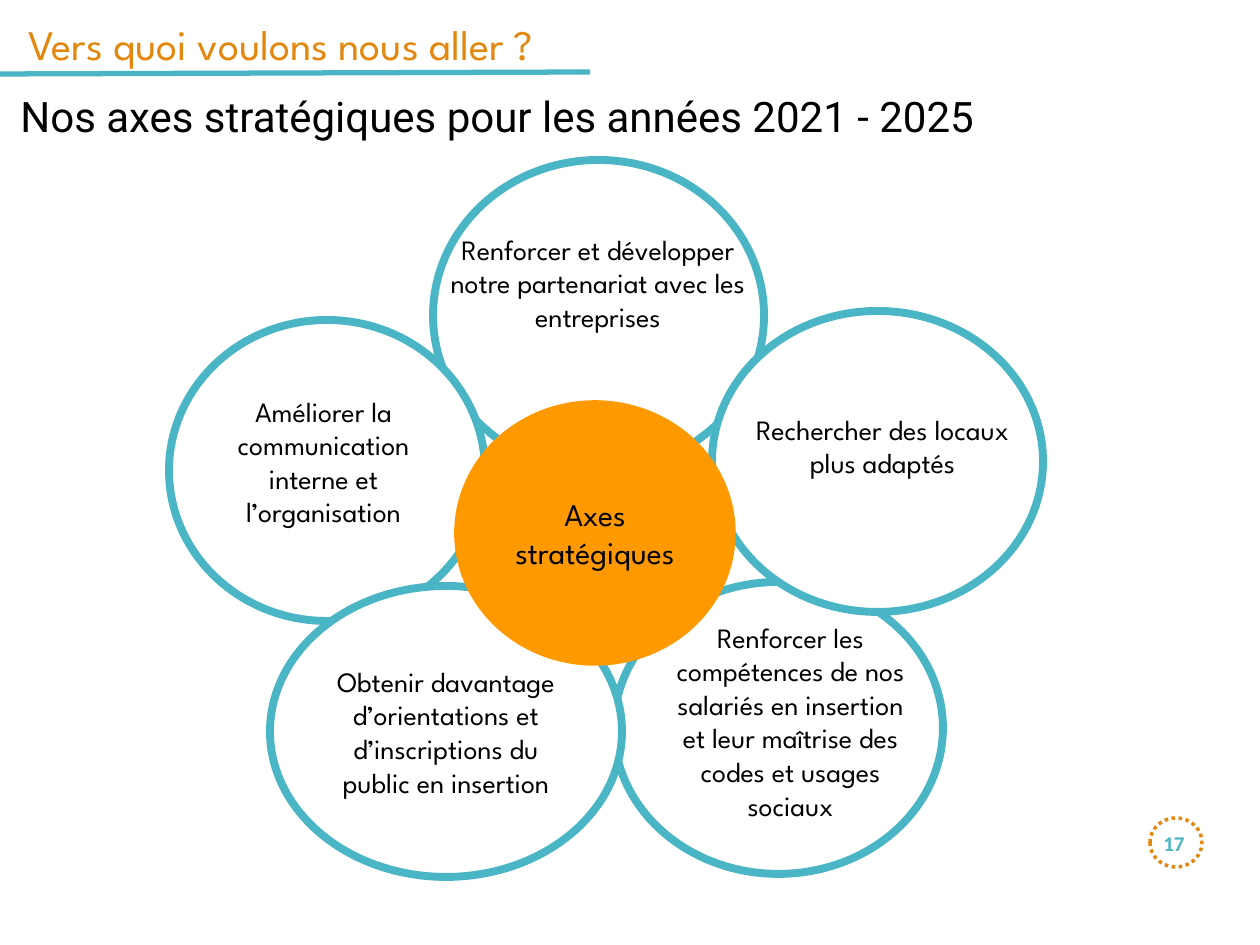
from dataclasses import dataclass
from typing import Any, Optional

from pptx import Presentation
from pptx.dml.color import RGBColor
from pptx.enum.dml import MSO_LINE
from pptx.enum.shapes import MSO_CONNECTOR, MSO_SHAPE
from pptx.enum.text import MSO_ANCHOR, MSO_AUTO_SIZE, PP_ALIGN
from pptx.oxml.ns import qn
from pptx.util import Emu, Pt
from lxml.etree import SubElement

EMU_PER_INCH = 914400
PX_PER_INCH = 126

TEAL = RGBColor(0x4A, 0xB5, 0xC4)
OCHRE = RGBColor(0xE3, 0x88, 0x0F)
ORANGE = RGBColor(0xFF, 0x99, 0x00)
WHITE = RGBColor(0xFF, 0xFF, 0xFF)
BLACK = RGBColor(0x00, 0x00, 0x00)


@dataclass(frozen=True)
class Frame:
    left: int
    top: int
    width: int
    height: int


@dataclass(frozen=True)
class Style:
    size: int
    color: RGBColor = BLACK
    font: str = "League Spartan"
    bold: bool = False
    align: PP_ALIGN = PP_ALIGN.CENTER
    anchor: MSO_ANCHOR = MSO_ANCHOR.TOP
    auto_size: MSO_AUTO_SIZE = MSO_AUTO_SIZE.SHAPE_TO_FIT_TEXT


@dataclass(frozen=True)
class Label:
    frame: Frame
    text: str
    style: Style


@dataclass(frozen=True)
class Circle:
    frame: Frame
    fill: Optional[RGBColor] = WHITE
    line: RGBColor = TEAL
    weight: float = 4.5
    dash: Optional[MSO_LINE] = None
    text: str = ""


FIXED = {"anchor": MSO_ANCHOR.MIDDLE, "auto_size": MSO_AUTO_SIZE.NONE}
TITLE = Style(24, OCHRE, align=PP_ALIGN.LEFT, **FIXED)
SUBTITLE = Style(24, font="Roboto", align=PP_ALIGN.LEFT)
NUMBER = Style(12, TEAL, "Calibri", True, PP_ALIGN.RIGHT, **FIXED)
AXIS = Style(16)
INSIDE = Style(16, **FIXED)
HUB = Style(18)

CIRCLES = [
    Circle(Frame(1150, 818, 52, 49), None, OCHRE, 2, MSO_LINE.ROUND_DOT),
    Circle(Frame(614, 582, 329, 292)),
    Circle(Frame(433, 160, 331, 311)),
    Circle(Frame(169, 320, 316, 301)),
    Circle(Frame(712, 311, 331, 301)),
    Circle(
        Frame(270, 586, 352, 291),
        text="Obtenir davantage d’orientations et d’inscriptions du public en insertion",
    ),
    Circle(Frame(456, 402, 278, 262), ORANGE, ORANGE, 2),
]

LABELS = [
    Label(Frame(903, 818, 294, 50), "17", NUMBER),
    Label(Frame(8, 84, 1114, 63), "Nos axes stratégiques pour les années 2021 - 2025", SUBTITLE),
    Label(Frame(435, 226, 326, 149), "Renforcer et développer notre partenariat avec les entreprises", AXIS),
    Label(
        Frame(662, 614, 257, 251),
        "Renforcer les compétences de nos salariés en insertion et leur maîtrise des codes et usages sociaux",
        AXIS,
    ),
    Label(Frame(742, 406, 281, 115), "Rechercher des locaux plus adaptés", AXIS),
    Label(Frame(202, 388, 243, 149), "Améliorer la communication interne et l’organisation", AXIS),
    Label(Frame(478, 489, 234, 89), "Axes stratégiques", HUB),
]


def px(length: int) -> Emu:
    return Emu(round(length * EMU_PER_INCH / PX_PER_INCH))


def place(frame: Frame) -> tuple[Emu, Emu, Emu, Emu]:
    return px(frame.left), px(frame.top), px(frame.width), px(frame.height)


def apply(target: Any, values: dict[str, Any]) -> None:
    for name, value in values.items():
        setattr(target, name, value)


def write(box: Any, text: str, style: Style) -> None:
    apply(box.text_frame, {
        "word_wrap": True,
        "auto_size": style.auto_size,
        "vertical_anchor": style.anchor,
    })
    para = box.text_frame.paragraphs[0]
    para.alignment = style.align
    span = para.add_run()
    span.text = text
    apply(span.font, {"name": style.font, "size": Pt(style.size), "bold": style.bold})
    span.font.color.rgb = style.color


def draw_circle(page: Any, circle: Circle) -> None:
    shape = page.shapes.add_shape(MSO_SHAPE.OVAL, *place(circle.frame))
    shape.shadow.inherit = False
    if circle.fill is None:
        shape.fill.background()
    else:
        shape.fill.solid()
        shape.fill.fore_color.rgb = circle.fill
    shape.line.color.rgb = circle.line
    apply(shape.line, {"width": Pt(circle.weight), "dash_style": circle.dash})
    if circle.text:
        write(shape, circle.text, INSIDE)


def draw_label(page: Any, label: Label) -> None:
    box = page.shapes.add_textbox(*place(label.frame))
    write(box, label.text, label.style)


def draw_title(page: Any) -> None:
    title = page.shapes.title
    left, top, width, height = place(Frame(16, -6, 1134, 100))
    apply(title, {"left": left, "top": top, "width": width, "height": height})
    write(title, "Vers quoi voulons nous aller ?", TITLE)
    rule = page.shapes.add_connector(MSO_CONNECTOR.STRAIGHT, px(0), px(74), px(590), px(72))
    rule.line.color.rgb = TEAL
    rule.line.width = Pt(3)
    SubElement(rule._element.spPr, qn("a:effectLst"))


def main() -> None:
    deck = Presentation()
    apply(deck, {"slide_width": px(1260), "slide_height": px(945)})
    page = deck.slides.add_slide(deck.slide_layouts[5])
    draw_title(page)
    for circle in CIRCLES:
        draw_circle(page, circle)
    for label in LABELS:
        draw_label(page, label)
    deck.save("out.pptx")


if __name__ == "__main__":
    main()
